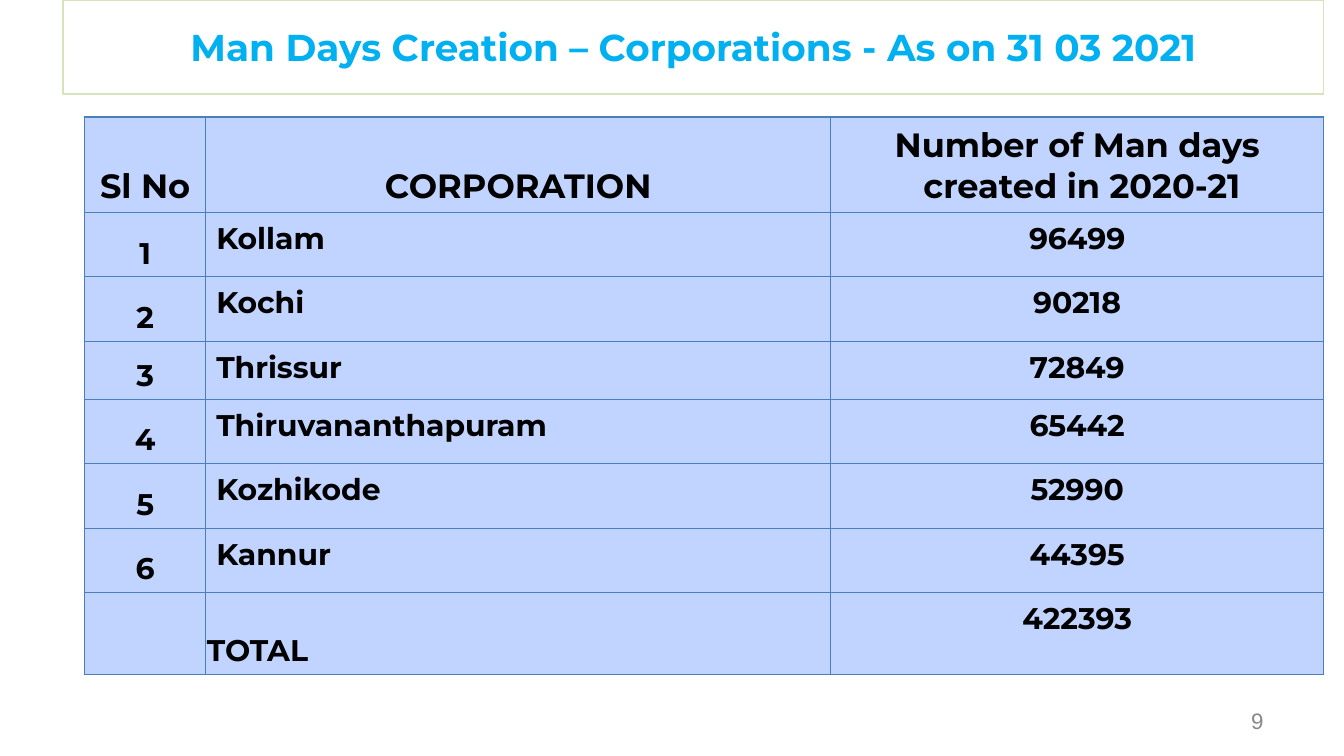
from lxml import etree
from pptx import Presentation
from pptx.dml.color import RGBColor
from pptx.enum import text
from pptx.oxml import ns
from pptx.util import Inches, Pt

SKY = RGBColor(0x00, 0xB0, 0xF0)
SAGE = RGBColor(0xD6, 0xE3, 0xBC)
PALE = RGBColor(0xC0, 0xD4, 0xFF)
EDGE = RGBColor(0x4B, 0x7E, 0xBC)
GREY = RGBColor(0x88, 0x88, 0x88)
BLACK = RGBColor(0, 0, 0)
FONT = "Montserrat"
LEFT, MID, RIGHT = text.PP_ALIGN.LEFT, text.PP_ALIGN.CENTER, text.PP_ALIGN.RIGHT
TOP, CENTRE, LOW = text.MSO_ANCHOR.TOP, text.MSO_ANCHOR.MIDDLE, text.MSO_ANCHOR.BOTTOM
TIGHT = (0.01, 0.01, 0.01, 0.04)
LOOSE = (0.08, 0.06, 0.08, 0.06)
COLS = [0.9, 4.65, 3.67]
ROWS = [0.71, 0.48, 0.48, 0.43, 0.48, 0.48, 0.48, 0.61]
HEAD = ["Sl No", "CORPORATION", "Number of Man days\n created in 2020-21"]
DATA = [
    ("Kollam", 96499),
    ("Kochi", 90218),
    ("Thrissur", 72849),
    ("Thiruvananthapuram", 65442),
    ("Kozhikode", 52990),
    ("Kannur", 44395),
]


def write(frame, words, size, color, align, font=FONT, bold=True):
    """Put one formatted paragraph into a text frame."""
    para = frame.paragraphs[0]
    para.text = words
    para.alignment = align
    for run in para.runs:
        face = run.font
        face.name, face.size, face.bold = font, Pt(size), bold
        face.color.rgb = color


def edge(cell):
    """Draw a thin line on all four sides of a cell."""
    props = cell._tc.get_or_add_tcPr()
    for side in ("lnL", "lnR", "lnT", "lnB"):
        line = etree.SubElement(props, ns.qn(f"a:{side}"), w=str(Pt(0.75)))
        fill = etree.SubElement(line, ns.qn("a:solidFill"))
        etree.SubElement(fill, ns.qn("a:srgbClr"), val=str(EDGE))


def fill_cell(cell, words, size, align, anchor, pad):
    """Set the text, padding, borders and fill of a cell."""
    cell.margin_left, cell.margin_top, cell.margin_right, cell.margin_bottom = map(Inches, pad)
    cell.vertical_anchor = anchor
    write(cell.text_frame, words, size, BLACK, align)
    edge(cell)
    cell.fill.solid()
    cell.fill.fore_color.rgb = PALE


def add_title(slide, words):
    """Place the framed slide title."""
    title = slide.shapes.title
    title.left, title.top, title.width, title.height = map(Inches, (0.47, 0, 9.38, 0.7))
    title.line.color.rgb = SAGE
    title.line.width = Pt(0.75)
    title.text_frame.vertical_anchor = CENTRE
    write(title.text_frame, words, 20, SKY, MID)


def add_grid(slide):
    """Build the table of man days by corporation."""
    frame = slide.shapes.add_table(
        len(ROWS), len(COLS), Inches(0.63), Inches(0.87), Inches(sum(COLS)), Inches(sum(ROWS)))
    grid = frame.table
    for col, width in zip(grid.columns, COLS):
        col.width = Inches(width)
    for row, height in zip(grid.rows, ROWS):
        row.height = Inches(height)
    for col, words in enumerate(HEAD):
        fill_cell(grid.cell(0, col), words, 18, MID, LOW, TIGHT)
    for row, (name, days) in enumerate(DATA, 1):
        fill_cell(grid.cell(row, 0), str(row), 16, MID, LOW, TIGHT)
        fill_cell(grid.cell(row, 1), name, 16, LEFT, TOP, LOOSE)
        fill_cell(grid.cell(row, 2), str(days), 16, MID, TOP, LOOSE)
    last = len(ROWS) - 1
    total = sum(days for _, days in DATA)
    fill_cell(grid.cell(last, 0), "", 16, MID, LOW, TIGHT)
    fill_cell(grid.cell(last, 1), "TOTAL", 16, LEFT, LOW, TIGHT)
    fill_cell(grid.cell(last, 2), str(total), 16, MID, TOP, LOOSE)


def add_number(slide, words):
    """Place the page number at the lower right."""
    box = slide.shapes.add_textbox(Inches(7.17), Inches(5.21), Inches(2.33), Inches(0.3))
    box.text_frame.word_wrap = True
    box.text_frame.vertical_anchor = CENTRE
    write(box.text_frame, words, 12, GREY, RIGHT, "Arial", False)


def main():
    """Build and save the slide."""
    deck = Presentation()
    deck.slide_width = Inches(10)
    deck.slide_height = Inches(10) * 9 // 16
    slide = deck.slides.add_slide(deck.slide_layouts[5])
    add_title(slide, "Man Days Creation – Corporations - As on 31 03 2021")
    add_number(slide, "9")
    add_grid(slide)
    deck.save("out.pptx")


if __name__ == "__main__":
    main()
